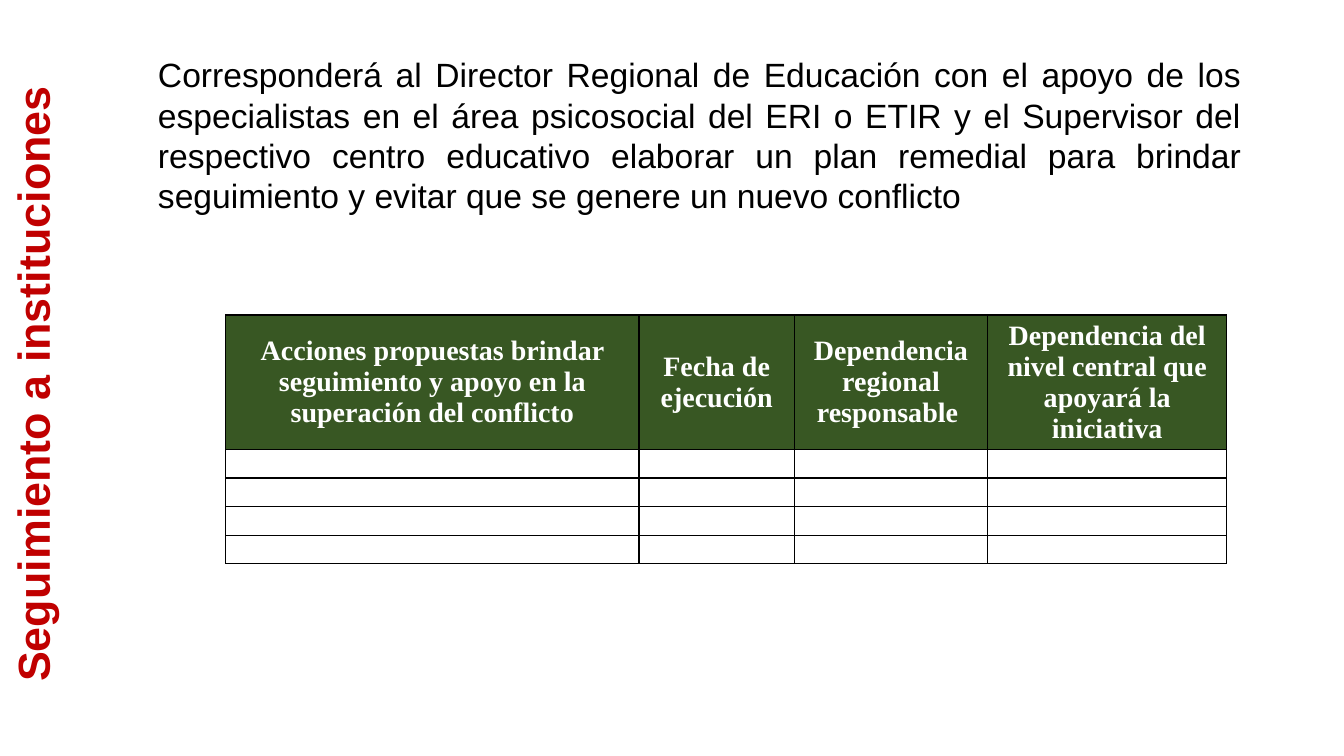
import pptx
import pptx.util
import pptx.dml.color
import pptx.enum.text
import lxml.etree
from pptx.oxml.ns import qn

Pt = pptx.util.Pt
ALIGN = pptx.enum.text.PP_ALIGN
ANCHOR = pptx.enum.text.MSO_ANCHOR
FIT = pptx.enum.text.MSO_AUTO_SIZE

# Content
TITLE = "Seguimiento a instituciones"
BODY = (
    "Corresponderá al Director Regional de Educación con el apoyo de los "
    "especialistas en el área psicosocial del ERI o ETIR y el Supervisor del "
    "respectivo centro educativo elaborar un plan remedial para brindar "
    "seguimiento y evitar que se genere un nuevo conflicto"
)
# Header text and column width
COLS = [
    ("Acciones propuestas brindar seguimiento y apoyo en la superación del conflicto", 295.2),
    ("Fecha de ejecución", 110.9),
    ("Dependencia regional responsable ", 138.2),
    ("Dependencia del nivel central que apoyará la iniciativa", 170.7),
]
BLANKS = 4
HEAD_H, ROW_H = 96, 20.4
COLOR = {"red": "C00000", "black": "000000", "white": "FFFFFF", "green": "385723"}


def rgb(name):
    return pptx.dml.color.RGBColor.from_string(COLOR[name])


def write(frame, text, size=24, font="Arial", color="black", bold=False, align=ALIGN.CENTER):
    frame.word_wrap = True
    para = frame.paragraphs[0]
    para.alignment = align
    run = para.add_run()
    run.text = text
    run.font.size = Pt(size)
    run.font.name = font
    run.font.bold = bold
    run.font.color.rgb = rgb(color)


def border(cell):
    props = cell._tc.get_or_add_tcPr()
    for i, side in enumerate(("a:lnL", "a:lnR", "a:lnT", "a:lnB")):
        line = lxml.etree.Element(qn(side), w=str(Pt(1)))
        fill = lxml.etree.SubElement(line, qn("a:solidFill"))
        lxml.etree.SubElement(fill, qn("a:srgbClr"), val=COLOR["black"])
        props.insert(i, line)


deck = pptx.Presentation()
deck.slide_width, deck.slide_height = Pt(960), Pt(540)
slide = deck.slides.add_slide(deck.slide_layouts[5])

# Vertical title
title = slide.shapes.title
title.left, title.top, title.width, title.height = Pt(-226.8), Pt(251.3), Pt(499.7), Pt(46.1)
title.rotation = 270
title.text_frame.auto_size = FIT.SHAPE_TO_FIT_TEXT
title.text_frame.vertical_anchor = ANCHOR.TOP
write(title.text_frame, TITLE, size=32, color="red", bold=True)

# Body text
body = slide.shapes.add_textbox(Pt(105.8), Pt(35.3), Pt(787.7), Pt(123.8))
body.text_frame.auto_size = FIT.SHAPE_TO_FIT_TEXT
write(body.text_frame, BODY, align=ALIGN.JUSTIFY)

# Follow-up table
wide = sum(width for _, width in COLS)
high = HEAD_H + BLANKS * ROW_H
table = slide.shapes.add_table(
    BLANKS + 1, len(COLS), Pt(161.3), Pt(225), Pt(wide), Pt(high)
).table
for r, row in enumerate(table.rows):
    row.height = Pt(ROW_H if r else HEAD_H)
    for c, (head, width) in enumerate(COLS):
        table.columns[c].width = Pt(width)
        cell = table.cell(r, c)
        cell.margin_left = cell.margin_right = Pt(7.9)
        cell.margin_top = cell.margin_bottom = 0
        cell.vertical_anchor = ANCHOR.MIDDLE
        cell.fill.solid()
        cell.fill.fore_color.rgb = rgb("white" if r else "green")
        border(cell)
        if r == 0:
            write(cell.text_frame, head, size=20, font="Times New Roman",
                  color="white", bold=True)
        else:
            # Small end mark keeps blank rows low
            para = cell.text_frame.paragraphs[0]
            lxml.etree.SubElement(para._p, qn("a:endParaRPr"), sz="1200")

deck.save("out.pptx")
